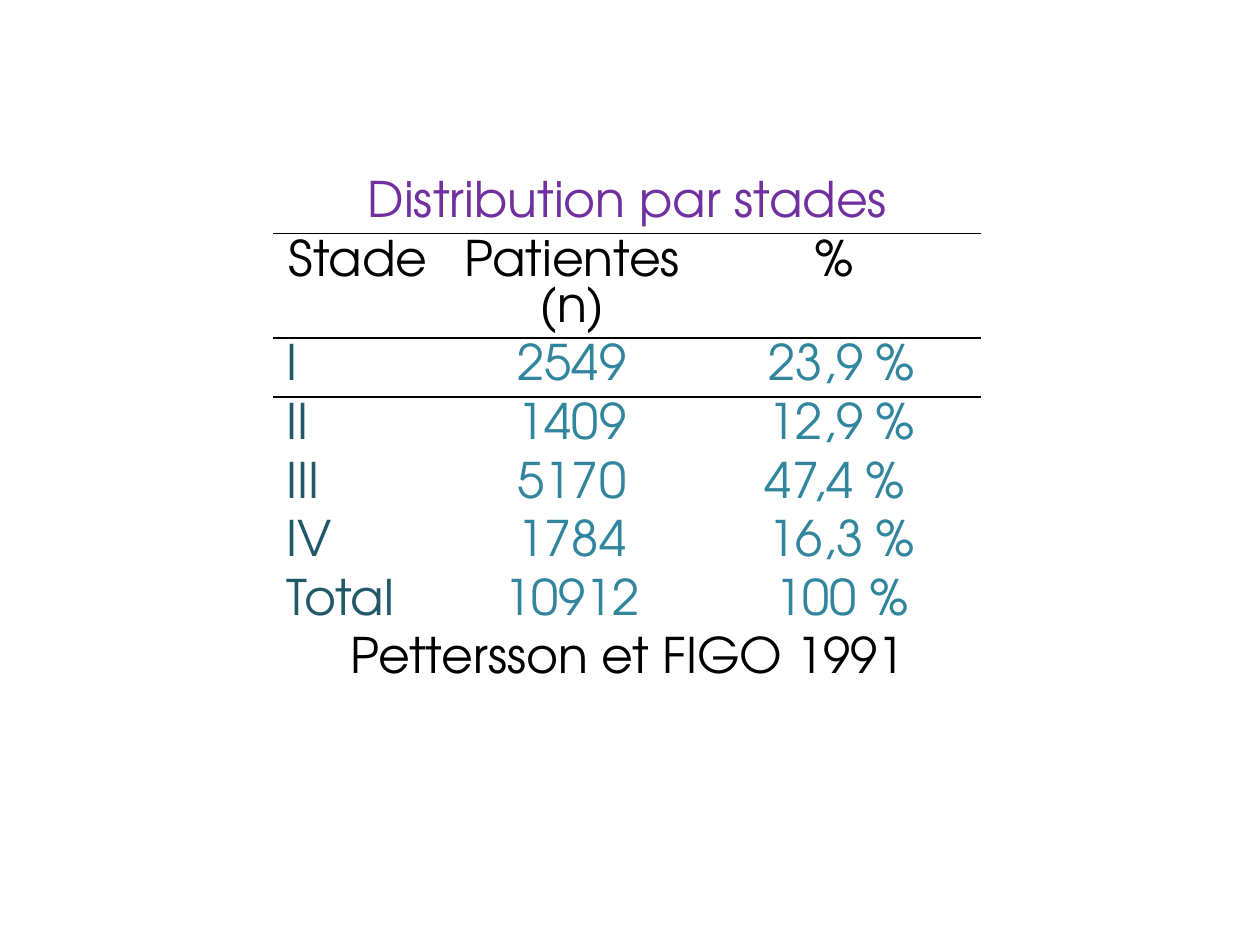
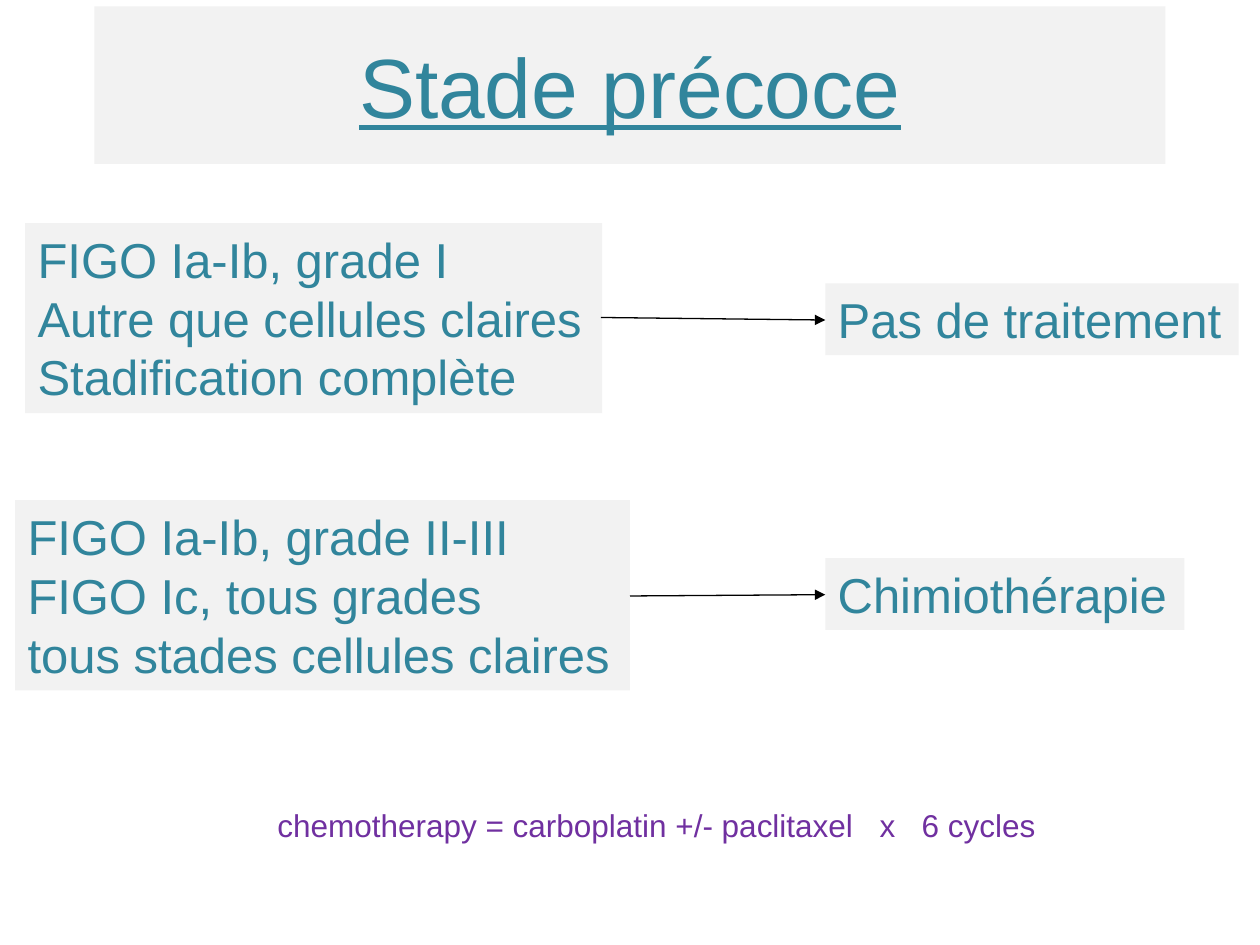
from pptx import Presentation
from pptx.dml.color import RGBColor
from pptx.enum.shapes import MSO_CONNECTOR
from pptx.enum.text import MSO_ANCHOR, MSO_AUTO_SIZE, PP_ALIGN as AL
from pptx.oxml.ns import qn
from pptx.util import Pt
from lxml.etree import SubElement

COLORS = {
    "title": "31859C",
    "accent": "7030A0",
    "stage": "215968",
    "text": "000000",
    "panel": "F2F2F2",
}
SANS = "Arial"
GEOMETRIC = "TeX Gyre Adventor"
BODY_SIZE = 28
NO_STYLE = "{2D5ABB26-0587-4C30-8999-92F81FD0307C}"

STAGES = [
    ("I", "2549", "23,9 %"),
    ("II", "1409", "12,9 %"),
    ("III", "5170", "47,4 % "),
    ("IV", "1784", "16,3 %"),
    ("Total", "10912", "100 %"),
]
COL_WIDTHS = (96.48, 148.32, 159.84)
ROW_HEIGHT = 29.52
FIRST_STAGE_HEIGHT = 33.84


def rgb(name):
    return RGBColor.from_string(COLORS[name])


def style_paragraph(p, color, size=BODY_SIZE, font=SANS, align=AL.LEFT):
    p.alignment = align
    for r in p.runs:
        r.font.name = font
        r.font.size = Pt(size)
        r.font.color.rgb = rgb(color)


def add_box(slide, x, y, w, h, lines, color="title", size=BODY_SIZE,
            align=AL.LEFT, fill="panel"):
    """Add an unwrapped text box, one paragraph per line, sized to its text."""
    sp = slide.shapes.add_textbox(Pt(x), Pt(y), Pt(w), Pt(h))
    if fill:
        sp.fill.solid()
        sp.fill.fore_color.rgb = rgb(fill)
    tf = sp.text_frame
    tf.word_wrap = False
    tf.auto_size = MSO_AUTO_SIZE.SHAPE_TO_FIT_TEXT
    tf.text = "\n".join(lines)
    for p in tf.paragraphs:
        style_paragraph(p, color, size, align=align)
    return sp


def add_title(slide, text):
    sp = add_box(slide, 54, 3.6, 612, 90, [text], size=48, align=AL.CENTER)
    tf = sp.text_frame
    tf.auto_size = MSO_AUTO_SIZE.NONE
    tf.word_wrap = True
    tf.vertical_anchor = MSO_ANCHOR.MIDDLE
    tf.paragraphs[0].runs[0].font.underline = True


def add_arrow(slide, x1, y1, x2, y2):
    line = slide.shapes.add_connector(
        MSO_CONNECTOR.STRAIGHT, Pt(x1), Pt(y1), Pt(x2), Pt(y2))
    line.line.color.rgb = rgb("text")
    line.line.width = Pt(0.75)
    SubElement(line.line._get_or_add_ln(), qn("a:tailEnd"), type="triangle")
    SubElement(line.element.spPr, qn("a:effectLst"))


def add_regimen(slide, parts):
    """Add the treatment note, with a wide gap between its parts."""
    sp = add_box(slide, 141.12, 457.2, 462.96, 28.8, [parts[0]], fill=None)
    p = sp.text_frame.paragraphs[0]
    for part in parts[1:]:
        gap = p.add_run()
        gap.text = " "
        gap.font._element.set("spc", "1000")
        p.add_run().text = part
    style_paragraph(p, "accent", 18, align=AL.CENTER)


def set_border(cell, side):
    tc_pr = cell._tc.get_or_add_tcPr()
    ln = SubElement(tc_pr, qn(f"a:ln{side}"), w=str(Pt(1)))
    fill = SubElement(ln, qn("a:solidFill"))
    SubElement(fill, qn("a:srgbClr"), val=COLORS["text"])


def fill_cell(cell, text, color, align=AL.CENTER):
    cell.fill.background()
    cell.text = text
    p = cell.text_frame.paragraphs[0]
    p.line_spacing = Pt(26.2)
    style_paragraph(p, color, font=GEOMETRIC, align=align)


def add_stage_table(slide):
    n_rows = len(STAGES) + 3
    frame = slide.shapes.add_table(
        n_rows, 3, Pt(156.24), Pt(100.08), Pt(sum(COL_WIDTHS)), Pt(360))
    table = frame.table
    table.first_row = table.horz_banding = False
    for style in frame.element.iter(qn("a:tableStyleId")):
        style.text = NO_STYLE
    for col, width in zip(table.columns, COL_WIDTHS):
        col.width = Pt(width)
    for row in table.rows:
        row.height = Pt(ROW_HEIGHT)
    table.rows[2].height = Pt(FIRST_STAGE_HEIGHT)
    frame.height = Pt(360)

    # Rules above and below the header row
    for c in range(3):
        for r, side in ((0, "B"), (1, "T"), (1, "B"), (2, "T")):
            set_border(table.cell(r, c), side)

    for r, text, color in ((0, "Distribution par stades", "accent"),
                           (n_rows - 1, "Pettersson et FIGO 1991", "text")):
        table.cell(r, 0).merge(table.cell(r, 2))
        fill_cell(table.cell(r, 0), text, color)
    for c, text in enumerate(("Stade", "Patientes (n)", "% ")):
        fill_cell(table.cell(1, c), text, "text")
    for r, (stage, patients, share) in enumerate(STAGES, 2):
        fill_cell(table.cell(r, 0), stage, "stage", AL.LEFT)
        fill_cell(table.cell(r, 1), patients, "title")
        fill_cell(table.cell(r, 2), share, "title")


def add_early_stage(slide):
    add_title(slide, "Stade précoce")
    add_box(slide, 14.4, 127.44, 329.76, 108.72,
            ["FIGO Ia-Ib, grade I", "Autre que cellules claires",
             "Stadification complète"])
    add_box(slide, 8.64, 285.84, 351.36, 108.72,
            ["FIGO Ia-Ib, grade II-III", "FIGO Ic, tous grades",
             "tous stades cellules claires"])
    add_box(slide, 471.6, 162, 236.16, 41.04, ["Pas de traitement"])
    add_box(slide, 471.6, 318.96, 205.2, 41.04, ["Chimiothérapie"])
    add_regimen(slide, [" chemotherapy = carboplatin +/- paclitaxel",
                        "x", "6 cycles"])
    add_arrow(slide, 343.44, 181.44, 471.6, 182.88)
    add_arrow(slide, 360, 340.56, 471.6, 339.84)


def main():
    prs = Presentation()
    prs.slide_width, prs.slide_height = Pt(720), Pt(540)
    for build in (add_stage_table, add_early_stage):
        build(prs.slides.add_slide(prs.slide_layouts[6]))
    prs.save("out.pptx")


if __name__ == "__main__":
    main()
